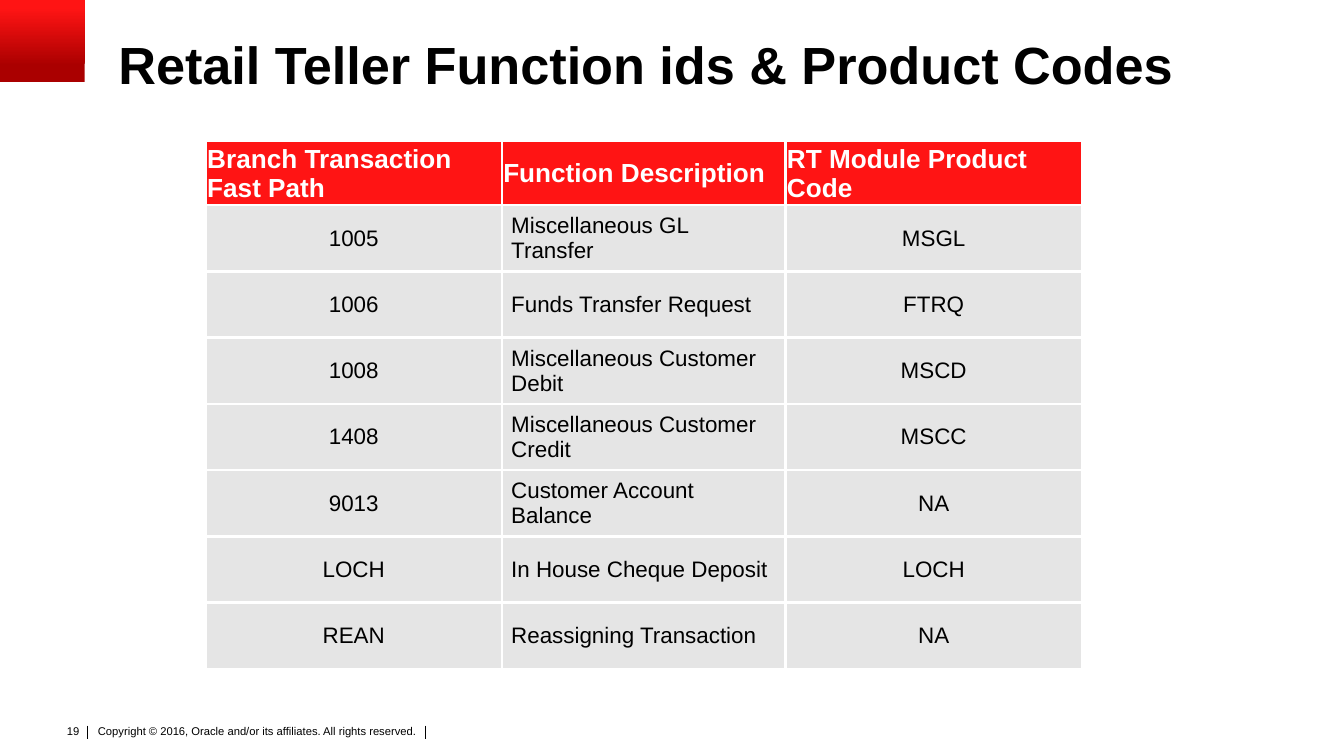
from lxml.etree import SubElement
from pptx import Presentation
from pptx.dml.color import RGBColor
from pptx.enum.shapes import MSO_CONNECTOR, MSO_SHAPE
from pptx.enum.text import MSO_ANCHOR, PP_ALIGN
from pptx.oxml.ns import qn
from pptx.util import Pt

BLACK, WHITE, RED, DARK_RED, GREY = "000000", "FFFFFF", "FF1414", "AA0000", "E5E5E5"
HEADINGS = ["Branch Transaction Fast Path", "Function Description", "RT Module Product Code"]
TRANSACTIONS = [
    ("1005", "Miscellaneous GL Transfer", "MSGL"),
    ("1006", "Funds Transfer Request", "FTRQ"),
    ("1008", "Miscellaneous Customer Debit", "MSCD"),
    ("1408", "Miscellaneous Customer Credit", "MSCC"),
    ("9013", "Customer Account Balance", "NA"),
    ("LOCH", "In House Cheque Deposit", "LOCH"),
    ("REAN", "Reassigning Transaction", "NA"),
]


def color(hex_code):
    return RGBColor.from_string(hex_code)


def write(frame, words, size, ink=BLACK, bold=False, align=PP_ALIGN.LEFT):
    paragraph = frame.paragraphs[0]
    paragraph.alignment = align
    run = paragraph.add_run()
    run.text = words
    run.font.name = "Arial"
    run.font.size = Pt(size)
    run.font.bold = bold
    run.font.color.rgb = color(ink)
    return paragraph


def set_margins(holder, left, top, right, bottom):
    holder.margin_left, holder.margin_top = Pt(left), Pt(top)
    holder.margin_right, holder.margin_bottom = Pt(right), Pt(bottom)


def add_label(slide, box, margins):
    frame = slide.shapes.add_textbox(*map(Pt, box)).text_frame
    frame.word_wrap = True
    set_margins(frame, *margins)
    return frame


def add_corner(slide, box):
    corner = slide.shapes.add_shape(MSO_SHAPE.RECTANGLE, *map(Pt, box))
    corner.shadow.inherit = False
    corner.line.fill.background()
    corner.fill.gradient()
    corner.fill.gradient_angle = 90
    for stop, (position, shade) in zip(corner.fill.gradient_stops, [(0.2, DARK_RED), (0.9, RED)]):
        stop.position = position
        stop.color.rgb = color(shade)


def add_title(slide, box):
    frame = add_label(slide, box, (0, 0, 0, 0))
    frame.vertical_anchor = MSO_ANCHOR.BOTTOM
    title = write(frame, "Retail Teller Function ids & Product Codes", 28, bold=True)
    title.line_spacing = 0.9


def add_divider(slide, x, top, height):
    divider = slide.shapes.add_connector(
        MSO_CONNECTOR.STRAIGHT, Pt(x), Pt(top), Pt(x), Pt(top + height))
    divider.line.color.rgb = color(BLACK)
    divider.line.width = Pt(0.5)
    SubElement(divider._element.spPr, qn("a:effectLst"))


def add_footer(slide, box):
    left, top, width, height = box
    number = add_label(slide, (left, top, 21.6, 14.4), (0, 3.6, 7.2, 3.6))
    write(number, "19", 6, align=PP_ALIGN.RIGHT)
    notice = add_label(slide, (left + 21.6, top + 2.2, width - 21.6, height - 2.2),
                       (2.9, 1.4, 2.9, 1.4))
    write(notice, "Copyright © 2016, Oracle and/or its affiliates. All rights reserved.", 6)
    for offset in (19, 200):
        add_divider(slide, left + offset, top + 4.4, 7.2)


def border_cell(cell):
    properties = cell._tc.get_or_add_tcPr()
    for side in ("a:lnL", "a:lnR", "a:lnT", "a:lnB"):
        edge = SubElement(properties, qn(side), w=str(Pt(1.5)))
        paint = SubElement(edge, qn("a:solidFill"))
        SubElement(paint, qn("a:srgbClr"), val=WHITE)


def fill_cell(cell, words, is_heading, align):
    border_cell(cell)
    cell.fill.solid()
    cell.fill.fore_color.rgb = color(RED if is_heading else GREY)
    cell.vertical_anchor = MSO_ANCHOR.MIDDLE
    if is_heading:
        set_margins(cell, 0.8, 0.8, 0.8, 0)
        write(cell.text_frame, words, 14, WHITE, True)
    else:
        set_margins(cell, 5.1, 0, 5.1, 0)
        write(cell.text_frame, words, 12, align=align)


def add_codes_table(slide, box):
    heading_height = 32.4
    rows = [HEADINGS, *TRANSACTIONS]
    table = slide.shapes.add_table(len(rows), len(HEADINGS), *map(Pt, box)).table
    for column, width in zip(table.columns, (158.6, 152, 158.8)):
        column.width = Pt(width)
    for index, values in enumerate(rows):
        is_heading = index == 0
        row_height = heading_height if is_heading else (box[3] - heading_height) / len(TRANSACTIONS)
        table.rows[index].height = Pt(row_height)
        for place, words in enumerate(values):
            align = PP_ALIGN.LEFT if place == 1 else PP_ALIGN.CENTER
            fill_cell(table.cell(index, place), words, is_heading, align)


def main():
    deck = Presentation()
    deck.slide_width, deck.slide_height = Pt(720), Pt(405)
    slide = deck.slides.add_slide(deck.slide_layouts[6])
    add_footer(slide, (28, 384.4, 219, 19.5))
    add_corner(slide, (0, 0, 45.4, 44))
    add_title(slide, (63.4, 19.4, 648, 31.7))
    add_codes_table(slide, (110.2, 75.5, 469.4, 281))
    deck.save("out.pptx")


if __name__ == "__main__":
    main()
